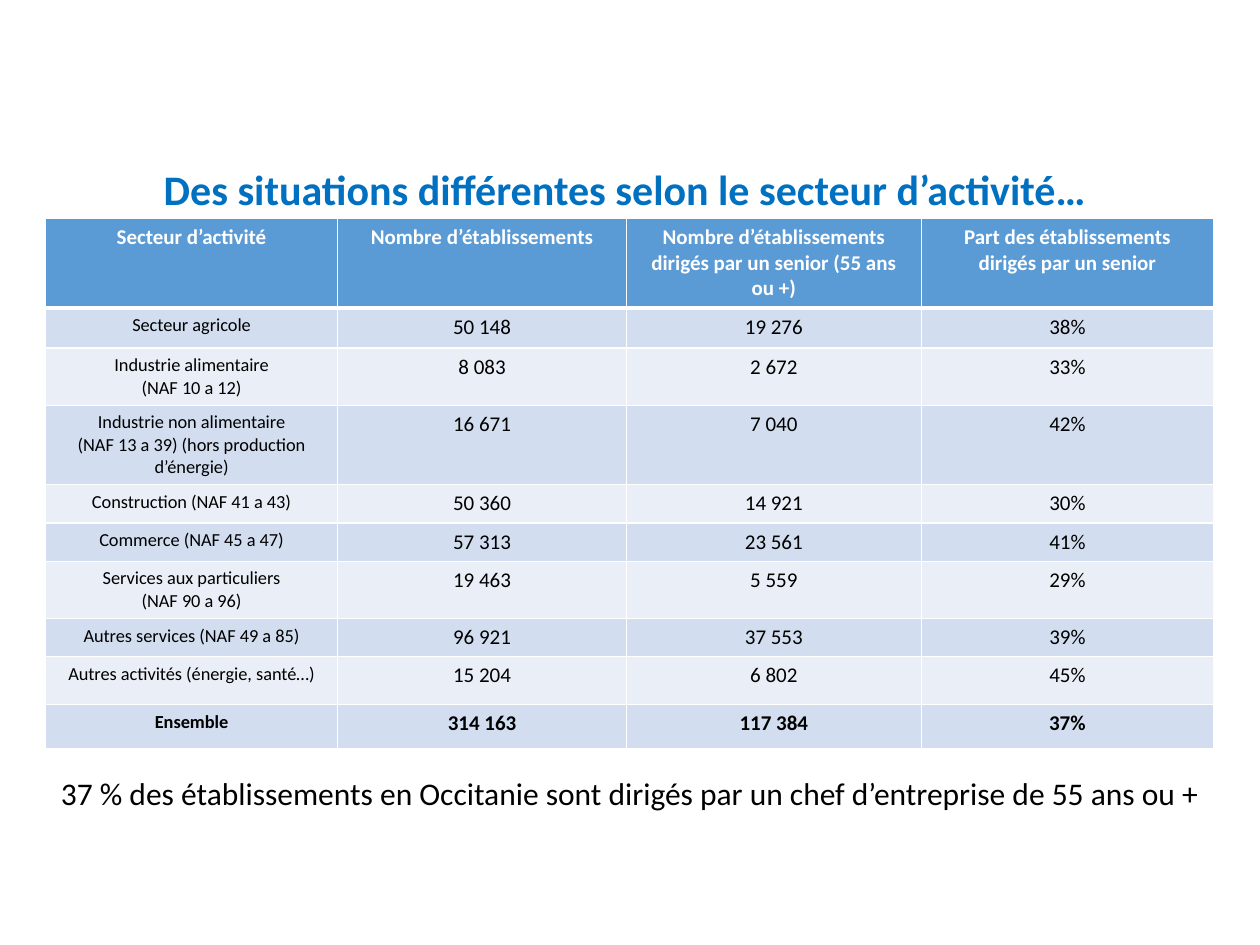
from lxml.etree import SubElement
from pptx import Presentation
from pptx.dml.color import RGBColor
from pptx.enum.text import MSO_ANCHOR as Anchor, MSO_AUTO_SIZE as AutoSize, PP_ALIGN as Align
from pptx.oxml.ns import qn
from pptx.util import Pt

WHITE = RGBColor(0xFF, 0xFF, 0xFF)
BLACK = RGBColor(0x00, 0x00, 0x00)
TITLE_BLUE = RGBColor(0x00, 0x70, 0xC0)
HEADER_BLUE = RGBColor(0x5B, 0x9B, 0xD5)
BANDS = (RGBColor(0xEA, 0xEF, 0xF7), RGBColor(0xD2, 0xDE, 0xEF))

COLUMN_WIDTHS = (167, 165, 168.5, 167)
ROW_HEIGHTS = (42.5, 23, 27.4, 37.4, 18, 18, 27.4, 18.7, 27.4, 25.2)
ROWS = (
    ("Secteur d’activité", "Nombre d’établissements",
     "Nombre d’établissements dirigés par un senior (55 ans ou +)",
     "Part des établissements dirigés par un senior"),
    ("Secteur agricole", "50 148", "19 276", "38%"),
    ("Industrie alimentaire\n(NAF 10 a 12)", "8 083", "2 672", "33%"),
    ("Industrie non alimentaire\n(NAF 13 a 39) (hors production d’énergie)",
     "16 671", "7 040", "42%"),
    ("Construction (NAF 41 a 43)", "50 360", "14 921", "30%"),
    ("Commerce (NAF 45 a 47)", "57 313", "23 561", "41%"),
    ("Services aux particuliers\n(NAF 90 a 96)", "19 463", "5 559", "29%"),
    ("Autres services (NAF 49 a 85)", "96 921", "37 553", "39%"),
    ("Autres activités (énergie, santé…)", "15 204", "6 802", "45%"),
    ("Ensemble", "314 163", "117 384", "37%"),
)


class SlideBuilder:
    font_name = "Calibri"

    def __init__(self, slide):
        self.slide = slide

    def set_text(self, frame, text, size, color=BLACK, bold=False, line_spacing=None):
        frame.text = text
        for paragraph in frame.paragraphs:
            paragraph.alignment = Align.CENTER
            paragraph.line_spacing = line_spacing
            font = paragraph.font
            font.name, font.size, font.bold = self.font_name, Pt(size), bold
            font.color.rgb = color

    def title(self, text, left, top, width, height):
        shape = self.slide.shapes.title
        shape.left, shape.top = Pt(left), Pt(top)
        shape.width, shape.height = Pt(width), Pt(height)
        frame = shape.text_frame
        frame.vertical_anchor = Anchor.MIDDLE
        frame.auto_size = AutoSize.NONE
        self.set_text(frame, text, 24, TITLE_BLUE, True, 0.9)

    def text(self, text, left, top, width, height, size):
        box = self.slide.shapes.add_textbox(Pt(left), Pt(top), Pt(width), Pt(height))
        box.text_frame.word_wrap = True
        box.text_frame.auto_size = AutoSize.SHAPE_TO_FIT_TEXT
        self.set_text(box.text_frame, text, size)

    def borders(self, cell, top, bottom):
        properties = cell._tc.get_or_add_tcPr()
        sides = (("a:lnL", 1), ("a:lnR", 1), ("a:lnT", top), ("a:lnB", bottom))
        for tag, width in sides:
            line = SubElement(properties, qn(tag), w=str(Pt(width)))
            fill = SubElement(line, qn("a:solidFill"))
            SubElement(fill, qn("a:srgbClr"), val=str(WHITE))

    def table(self, rows, left, top, widths, heights):
        table = self.slide.shapes.add_table(
            len(rows), len(widths), Pt(left), Pt(top),
            Pt(sum(widths)), Pt(sum(heights))).table
        for column, width in zip(table.columns, widths):
            column.width = Pt(width)
        for row, height in zip(table.rows, heights):
            row.height = Pt(height)
        last = len(rows) - 1
        for r, values in enumerate(rows):
            header = r == 0
            for c, value in enumerate(values):
                cell = table.cell(r, c)
                self.set_text(cell.text_frame, value,
                              10.5 if c == 0 and not header else 12,
                              WHITE if header else BLACK, r in (0, last))
                # Heavy rule between the header and the body
                self.borders(cell, 3 if r == 1 else 1, 3 if header else 1)
                cell.fill.solid()
                cell.fill.fore_color.rgb = HEADER_BLUE if header else BANDS[r % 2]


def main():
    presentation = Presentation()
    presentation.slide_width, presentation.slide_height = Pt(720), Pt(540)
    title_only = presentation.slide_layouts[5]
    builder = SlideBuilder(presentation.slides.add_slide(title_only))

    # Title
    builder.title("Des situations différentes selon le secteur d’activité…",
                  46.8, 77.8, 620.6, 63.4)
    # Establishments by sector
    builder.table(ROWS, 26, 124.8, COLUMN_WIDTHS, ROW_HEIGHTS)
    # Conclusion
    builder.text("37 % des établissements en Occitanie sont dirigés par "
                 "un chef d’entreprise de 55 ans ou +", 26, 438.5, 668, 29, 18)

    presentation.save("out.pptx")


if __name__ == "__main__":
    main()
